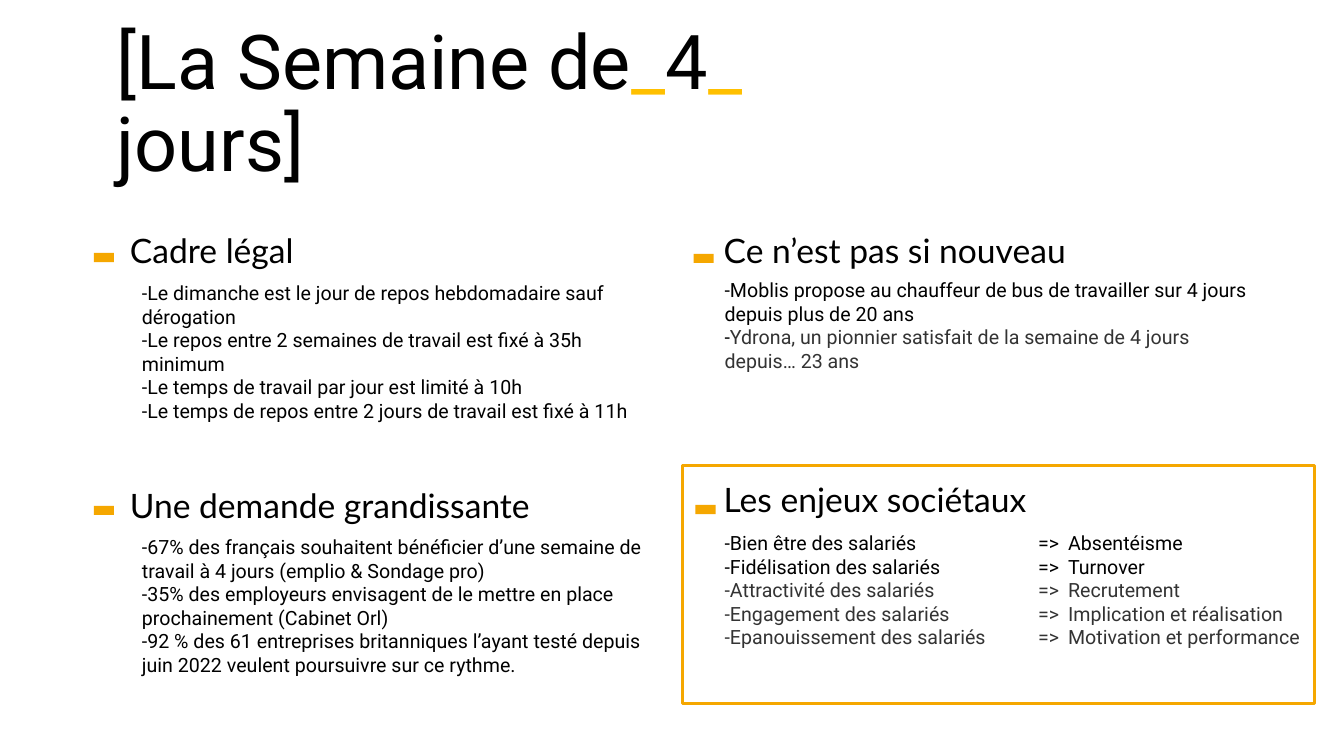
from dataclasses import dataclass

from pptx import Presentation
from pptx import util as u
from pptx.dml.color import RGBColor
from pptx.enum import shapes, text


@dataclass(frozen=True)
class Theme:
    ink: str = "000000"
    grey: str = "333333"
    gold: str = "FFC000"
    amber: str = "F5A700"
    sans: str = "Roboto"
    head: str = "Lato"
    big: int = 54
    mid: int = 24
    small: int = 14


class Deck:
    def __init__(self, theme, slide):
        self.theme = theme
        self.slide = slide

    def box(self, area, paras, size, font, grow=False, low=False, lead=None, gap=0, hang=0):
        """Add text; paras is a list of paragraphs, each a list of (words, colour)."""
        frame = self.slide.shapes.add_textbox(*map(u.Pt, area)).text_frame
        frame.word_wrap = True
        fit = text.MSO_AUTO_SIZE
        frame.auto_size = fit.SHAPE_TO_FIT_TEXT if grow else fit.NONE
        frame.vertical_anchor = text.MSO_ANCHOR.BOTTOM if low else text.MSO_ANCHOR.TOP
        for i, runs in enumerate(paras):
            para = frame.add_paragraph() if i else frame.paragraphs[0]
            para.space_before = u.Pt(gap)
            if lead:
                para.line_spacing = lead
            if hang:
                props = para._p.get_or_add_pPr()
                props.set("marL", str(u.Pt(hang)))
                props.set("indent", str(-u.Pt(hang)))
            for words, tone in runs:
                run = para.add_run()
                run.text = words
                run.font.size = u.Pt(size)
                run.font.name = font
                run.font.color.rgb = RGBColor.from_string(tone)

    def title(self, area, runs):
        self.box(area, [runs], self.theme.big, self.theme.sans, low=True, lead=0.9)

    def head(self, left, top, words):
        t = self.theme
        self.box((left, top, 326, 39), [[(words, t.ink)]], t.mid, t.head, lead=0.9, gap=10)

    def body(self, area, paras, hang=0):
        self.box(area, paras, self.theme.small, self.theme.sans, grow=True, hang=hang)

    def rect(self, area):
        shape = self.slide.shapes.add_shape(shapes.MSO_SHAPE.RECTANGLE, *map(u.Pt, area))
        shape.shadow.inherit = False
        return shape

    def bar(self, left, top):
        shape = self.rect((left, top, 14.4, 6.5))
        shape.fill.solid()
        shape.fill.fore_color.rgb = RGBColor.from_string(self.theme.amber)
        shape.line.fill.background()

    def frame(self, area):
        shape = self.rect(area)
        shape.fill.background()
        shape.line.color.rgb = RGBColor.from_string(self.theme.amber)
        shape.line.width = u.Pt(2.25)


def lines(tone, *words):
    return [[(w, tone)] for w in words]


def main():
    prs = Presentation()
    prs.slide_width, prs.slide_height = u.Pt(960), u.Pt(540)
    t = Theme()
    deck = Deck(t, prs.slides.add_slide(prs.slide_layouts[6]))

    deck.title((76.3, 51.8, 569.5, 85.7), [
        ("[La Semaine de", t.ink), ("_", t.gold), ("4", t.ink),
        ("_", t.gold), (" jours]", t.ink)])

    topics = [
        ("Cadre légal", 85.7, 164.2, 67, 180.7),
        ("Une demande grandissante", 85.7, 346.3, 67, 361.4),
        ("Ce n’est pas si nouveau", 509.8, 164.2, 495.4, 181.4),
        ("Les enjeux sociétaux", 509.8, 342, 496.8, 360.7),
    ]
    for words, left, top, x, y in topics:
        deck.head(left, top, words)
        deck.bar(x, y)

    deck.body((94.3, 197.3, 376.6, 108.7), lines(
        t.ink,
        "-Le dimanche est le jour de repos hebdomadaire sauf dérogation",
        "-Le repos entre 2 semaines de travail est fixé à 35h minimum",
        "-Le temps de travail par jour est limité à 10h",
        "-Le temps de repos entre 2 jours de travail est fixé à 11h"))
    deck.body((94.3, 378.7, 376.6, 108.7), lines(
        t.ink,
        "-67% des français souhaitent bénéficier d’une semaine de "
        "travail à 4 jours (emplio & Sondage pro)",
        "-35% des employeurs envisagent de le mettre en place "
        "prochainement (Cabinet Orl)",
        "-92 % des 61 entreprises britanniques l’ayant testé depuis "
        "juin 2022 veulent poursuivre sur ce rythme."))
    deck.body((510.5, 195.1, 398.9, 74.9), [
        [("-Moblis propose au chauffeur de bus de travailler sur 4 jours "
          "depuis plus de 20 ans", t.ink)],
        [("-", t.ink), ("Ydrona, un pionnier satisfait de la semaine de 4 jours "
                        "depuis… 23 ans", t.grey)]])

    stakes = [
        ("Bien être", "Absentéisme", t.ink),
        ("Fidélisation", "Turnover", t.ink),
        ("Attractivité", "Recrutement", t.grey),
        ("Engagement", "Implication et réalisation", t.grey),
        ("Epanouissement", "Motivation et performance", t.grey),
    ]
    deck.body((510.5, 375.8, 213.8, 92.2),
              [[(f"-{cause} des salariés", tone)] for cause, _, tone in stakes])
    deck.body((734.4, 375.8, 213.8, 92.2),
              [[(f"=>\t{gain}", tone)] for _, gain, tone in stakes], hang=21.5)
    deck.frame((487.4, 332.6, 451.4, 169.9))

    prs.save("out.pptx")


if __name__ == "__main__":
    main()
